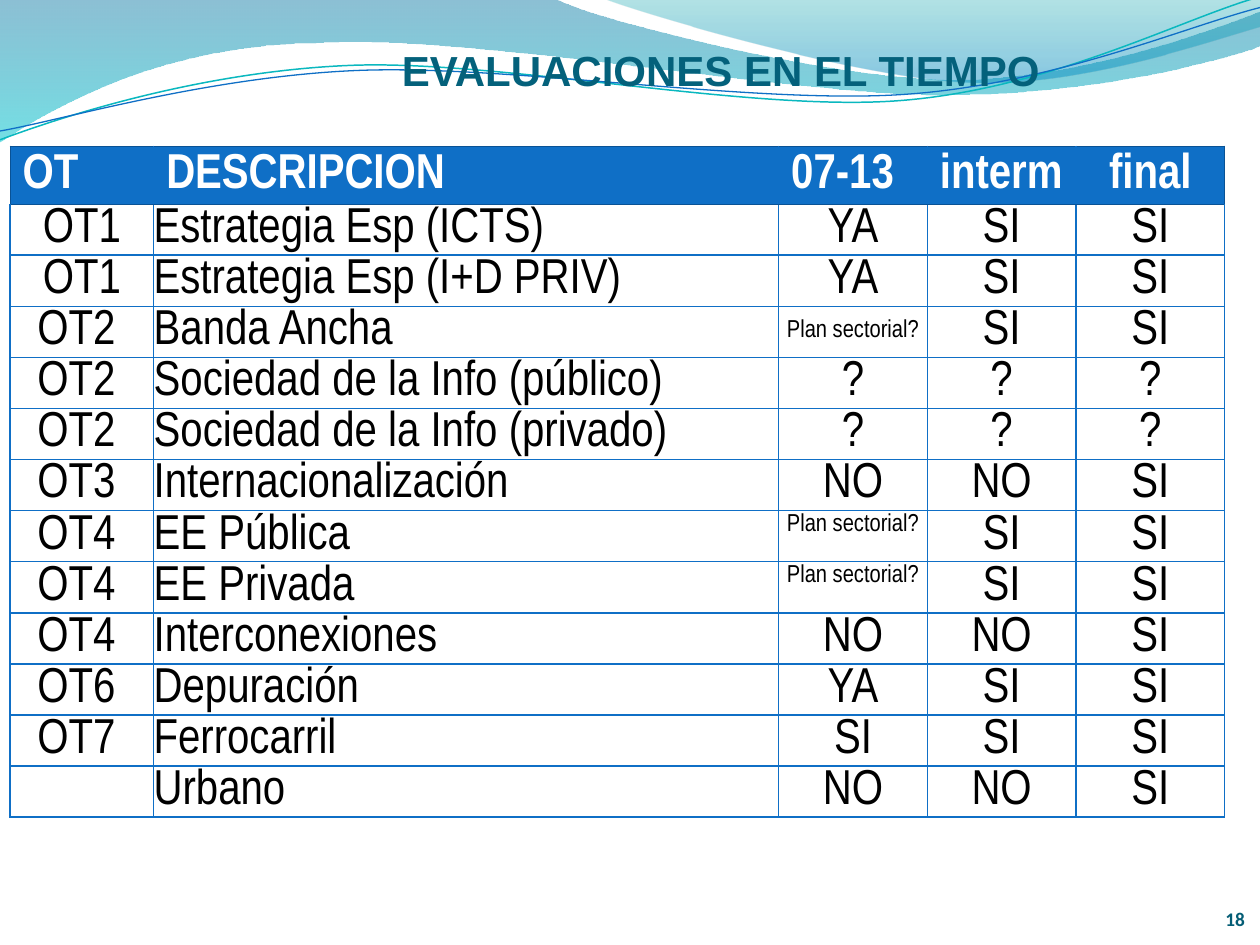
from lxml import etree
from pptx import Presentation
from pptx.dml.color import RGBColor
from pptx.enum.text import MSO_ANCHOR, PP_ALIGN
from pptx.oxml.ns import qn
from pptx.util import Inches, Pt

LEFT, MID, RIGHT, JUST = PP_ALIGN.LEFT, PP_ALIGN.CENTER, PP_ALIGN.RIGHT, PP_ALIGN.JUSTIFY
TOP, CENTER, BASE = MSO_ANCHOR.TOP, MSO_ANCHOR.MIDDLE, MSO_ANCHOR.BOTTOM

BLUE, NAVY, WHITE, BLACK = "0F6FC6", "095295", "FFFFFF", "000000"
PLAN = "Plan sectorial?"
WIDTHS = [1.14, 4.96, 1.18, 1.18, 1.18]
HEAD = ["OT", "DESCRIPCION", "07-13", "interm", "final"]
ROWS = [
    ["OT1", "Estrategia Esp (ICTS)", "YA", "SI", "SI"],
    ["OT1", "Estrategia Esp (I+D PRIV)", "YA", "SI", "SI"],
    ["OT2 ", "Banda Ancha", PLAN, "SI", "SI"],
    ["OT2 ", "Sociedad de la Info (público)", "?", "?", "?"],
    ["OT2 ", "Sociedad de la Info (privado)", "?", "?", "?"],
    ["OT3 ", "Internacionalización", "NO", "NO", "SI"],
    ["OT4 ", "EE Pública", PLAN, "SI", "SI"],
    ["OT4 ", "EE Privada", PLAN, "SI", "SI"],
    ["OT4 ", "Interconexiones", "NO", "NO", "SI"],
    ["OT6 ", "Depuración", "YA", "SI", "SI"],
    ["OT7 ", "Ferrocarril", "SI", "SI", "SI"],
    ["", "Urbano", "NO", "NO", "SI"],
]

BROAD = [
    [(0, -0.01)], [(4.4, -0.01)],
    [(4.76, 0.17), (6.64, 0.63), (7.58, 0.63)],
    [(8.53, 0.63), (9.58, 0.26), (10, 0.09)], [(10.01, 0.36)],
    [(9.83, 0.44), (8.7, 0.76), (7.46, 0.75)],
    [(6.22, 0.75), (3.82, 0.28), (2.57, 0.34)],
    [(1.29, 0.35), (0.46, 0.83), (-0.01, 1.13)],
]
CORNER = [
    [(4.79, -0.01)],
    [(5.09, 0.11), (6.82, 0.62), (7.69, 0.65)],
    [(8.56, 0.69), (9.61, 0.32), (10, 0.21)], [(10, 0)],
]
TEAL_LINE = [
    [(0, 1.11)],
    [(0.48, 0.93), (1.58, 0.57), (2.77, 0.52)],
    [(3.95, 0.47), (5.93, 0.89), (7.13, 0.8)],
    [(8.33, 0.71), (9.38, 0.15), (9.98, -0.02)],
]
BLUE_LINE = [
    [(0, 1.04)],
    [(0.47, 0.96), (1.64, 0.61), (2.83, 0.56)],
    [(4.03, 0.51), (5.97, 0.83), (7.17, 0.75)],
    [(8.36, 0.67), (9.41, 0.21), (10, 0.06)],
]


def color(code):
    """Turn a hex string into a colour."""
    return RGBColor.from_string(code)


def add_wave(slide, parts, close):
    """Draw an outline whose parts of three points are Bezier curves."""
    first, *rest = [(Inches(x), Inches(y)) for part in parts for x, y in part]
    pen = slide.shapes.build_freeform(*first)
    pen.add_line_segments(rest, close=close)
    wave = pen.convert_to_shape()
    wave.shadow.inherit = False
    lines = iter(list(wave.element.iter(qn("a:lnTo"))))
    for part in parts[1:]:
        group = [next(lines) for _ in part]
        if len(group) == 3:
            curve = etree.Element(qn("a:cubicBezTo"))
            group[0].addprevious(curve)
            for line in group:
                curve.append(line[0])
                line.getparent().remove(line)
    return wave


def add_band(slide, parts, stops):
    """Draw a wave with a see-through gradient from top to bottom."""
    band = add_wave(slide, parts, True)
    band.line.fill.background()
    band.fill.gradient()
    band.fill.gradient_angle = 270
    for stop, (place, code, _) in zip(band.fill.gradient_stops, stops):
        stop.position = place
        stop.color.rgb = color(code)
    for tint, (_, _, alpha) in zip(band.element.spPr.iter(qn("a:srgbClr")), stops):
        etree.SubElement(tint, qn("a:alpha"), val=str(alpha * 1000))


def add_curve(slide, parts, code, width):
    """Draw a wave as a thin line."""
    curve = add_wave(slide, parts, False)
    curve.fill.background()
    curve.line.color.rgb = color(code)
    curve.line.width = Pt(width)


def set_text(box, text, face, size, code, bold, align):
    """Write one styled paragraph into a text frame."""
    box.text = text
    para = box.paragraphs[0]
    para.alignment = align
    font = para.font
    font.name, font.size, font.bold = face, Pt(size), bold
    font.color.rgb = color(code)
    return para


def set_pad(box, pad):
    """Set the left, top, right and bottom margins of a box or cell."""
    box.margin_left, box.margin_top, box.margin_right, box.margin_bottom = map(Inches, pad)


def set_edges(cell, edges):
    """Draw the borders of a cell from side, colour and width."""
    props = cell._tc.get_or_add_tcPr()
    for side, code, width in edges:
        line = etree.SubElement(props, qn("a:ln" + side), w=str(Pt(width)))
        fill = etree.SubElement(line, qn("a:solidFill"))
        etree.SubElement(fill, qn("a:srgbClr"), val=code)


def fill_cell(cell, text, row, col):
    """Style one cell by its row and column."""
    top = row == 0
    small = text == PLAN
    high = small and row > 3
    dark, inner = (NAVY, 0.75), (BLUE, 1)
    set_edges(cell, [
        ("L", *(dark if top and col == 0 else inner)),
        ("R", *(dark if top and col == len(HEAD) - 1 else inner)),
        ("T", *(dark if row < 2 else inner)),
        ("B", *(dark if top else inner)),
    ])
    cell.fill.solid()
    cell.fill.fore_color.rgb = color(BLUE if top else WHITE)
    drop = 0.05 if high else 0 if small else 0.03
    set_pad(cell, (0.1, 0.1, 0.1, 0) if top else (0, drop, 0, 0))
    cell.vertical_anchor = TOP if top or high else CENTER
    align = LEFT if col == 1 or top and col < 4 else MID
    para = set_text(cell.text_frame, text, "Arial Narrow", 14 if small else 28,
                    WHITE if top else BLACK, top, align)
    para.line_spacing = 0.8


def add_grid(slide):
    """Add the table of evaluations."""
    data = [HEAD, *ROWS]
    head, body = Inches(0.46), Inches(4.87)
    grid = slide.shapes.add_table(len(data), len(HEAD), Inches(0.08), Inches(1.16),
                                  Inches(sum(WIDTHS)), head + body).table
    for col, width in enumerate(WIDTHS):
        grid.columns[col].width = Inches(width)
    for row, texts in enumerate(data):
        grid.rows[row].height = body // len(ROWS) if row else head
        for col, text in enumerate(texts):
            fill_cell(grid.cell(row, col), text, row, col)


def set_box(shape, place, anchor, *style):
    """Place a text shape without margins and write its text."""
    shape.left, shape.top, shape.width, shape.height = map(Inches, place)
    box = shape.text_frame
    box.word_wrap = True
    box.vertical_anchor = anchor
    set_pad(box, (0, 0, 0, 0))
    set_text(box, *style)


def main():
    """Build the slide and save it."""
    deck = Presentation()
    deck.slide_width, deck.slide_height = Inches(10), Inches(7.5)
    slide = deck.slides.add_slide(deck.slide_layouts[5])
    add_band(slide, BROAD, [(0, "0074A1", 45), (1, "00C6CF", 55)])
    add_band(slide, CORNER, [(0, "00A1A9", 30), (0.8, "008BBF", 45)])
    add_curve(slide, TEAL_LINE, "0AB8BF", 0.85)
    add_curve(slide, BLUE_LINE, BLUE, 0.75)
    title = slide.shapes.title
    title.element.getparent().append(title.element)
    set_box(title, (3.19, 0.13, 9.13, 0.85), CENTER,
            "EVALUACIONES EN EL TIEMPO", "Arial", 24, "04617B", True, JUST)
    add_grid(slide)
    page = slide.shapes.add_textbox(0, 0, 0, 0)
    set_box(page, (9.41, 7.06, 0.47, 0.32), BASE, "18", "Calibri", 11, "045D75", True, RIGHT)
    deck.save("out.pptx")


if __name__ == "__main__":
    main()
